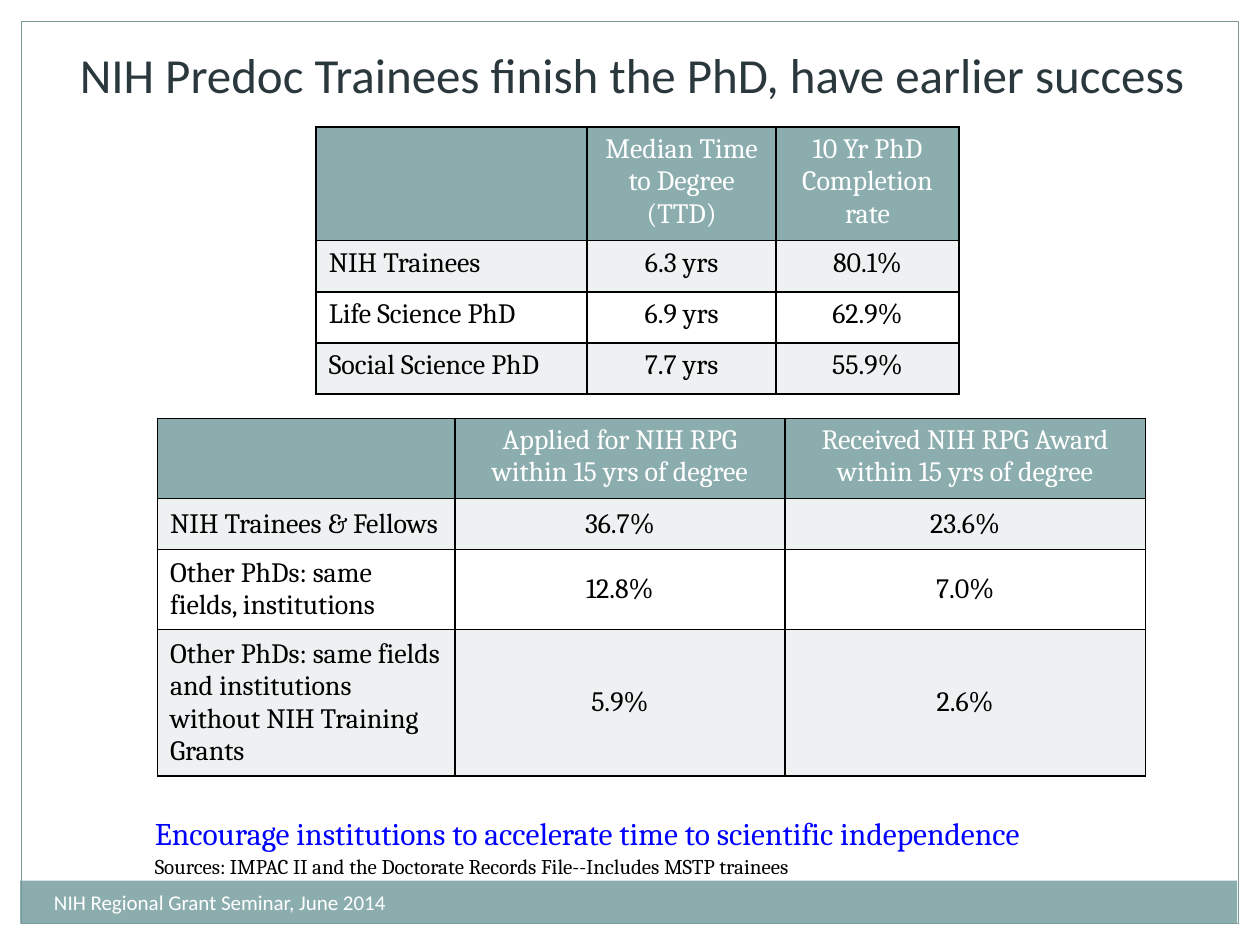
"""Build the slide on NIH predoctoral trainee outcomes with its two tables."""
from lxml.etree import SubElement
from pptx import Presentation
from pptx.dml.color import RGBColor
from pptx.enum.shapes import MSO_SHAPE as Shape
from pptx.enum.text import MSO_ANCHOR as Anchor, MSO_AUTO_SIZE as AutoSize, PP_ALIGN as Align
from pptx.oxml.ns import qn
from pptx.util import Inches, Pt

COLORS = {
    "white": "FFFFFF", "teal": "8CADAE", "frame": "7C999A", "band": "EEF1F2",
    "black": "000000", "title": "2A373D", "blue": "0000FF",
}

presentation = Presentation()
presentation.slide_width, presentation.slide_height = Inches(10), Inches(7.5)
column = presentation.slide_width / 100
row = presentation.slide_height / 75
slide = presentation.slides.add_slide(presentation.slide_layouts[5])


def grid(left, top, width, height):
    return [round(value) for value in (left * column, top * row, width * column, height * row)]


def style(paragraph, size, font, color, align=Align.LEFT):
    paragraph.alignment = align
    for run in paragraph.runs:
        run.font.size = Pt(size)
        run.font.name = font
        run.font.color.rgb = RGBColor.from_string(COLORS[color])


panels = [
    ((0, 0, 100, 1.7), "white", None),
    ((98.3, 0, 1.7, 75), "white", None),
    ((0, 0, 1.7, 75), "white", None),
    ((1.6, 69.9, 96.6, 3.4), "teal", None),
    ((1.7, 1.7, 96.6, 71.6), None, "frame"),
]
for box, fill, line in panels:
    shape = slide.shapes.add_shape(Shape.RECTANGLE, *grid(*box))
    shape.shadow.inherit = False
    if fill:
        shape.fill.solid()
        shape.fill.fore_color.rgb = RGBColor.from_string(COLORS[fill])
    else:
        shape.fill.background()
    if line:
        shape.line.color.rgb = RGBColor.from_string(COLORS[line])
        shape.line.width = Pt(0.75)
    else:
        shape.line.fill.background()

tables = [
    ((25.1, 10.1), (21.5, 15, 14.5), (9, 4.06, 4.06, 4.06), Anchor.TOP, [
        ("", "Median Time to Degree (TTD)", "10 Yr PhD Completion rate"),
        ("NIH Trainees", "6.3 yrs", "80.1%"),
        ("Life Science PhD", "6.9 yrs", "62.9%"),
        ("Social Science PhD", "7.7 yrs", "55.9%"),
    ]),
    ((12.5, 33.2), (23.6, 26.2, 28.6), (6.35, 4.06, 6.35, 11.65), Anchor.MIDDLE, [
        ("", "Applied for NIH RPG within 15 yrs of degree",
         "Received NIH RPG Award within 15 yrs of degree"),
        ("NIH Trainees & Fellows", "36.7%", "23.6%"),
        ("Other PhDs: same fields, institutions", "12.8%", "7.0%"),
        ("Other PhDs: same fields and institutions without NIH Training Grants", "5.9%", "2.6%"),
    ]),
]
row_fills = ["teal", "band", "white", "band"]
for origin, widths, heights, anchor, records in tables:
    box = grid(*origin, sum(widths), sum(heights))
    table = slide.shapes.add_table(len(records), len(widths), *box).table
    for table_column, width in zip(table.columns, widths):
        table_column.width = round(width * column)
    for table_row, height in zip(table.rows, heights):
        table_row.height = round(height * row)
    for row_index, record in enumerate(records):
        for column_index, text in enumerate(record):
            cell = table.cell(row_index, column_index)
            cell.text_frame.text = text
            cell.vertical_anchor = anchor if row_index else Anchor.TOP
            style(cell.text_frame.paragraphs[0], 16, "Cambria",
                  "black" if row_index else "white",
                  Align.CENTER if column_index else Align.LEFT)
            properties = cell._tc.get_or_add_tcPr()
            for side in ("a:lnL", "a:lnR", "a:lnT", "a:lnB"):
                border = SubElement(properties, qn(side), w=str(Pt(1)))
                border_fill = SubElement(border, qn("a:solidFill"))
                SubElement(border_fill, qn("a:srgbClr"), val=COLORS["black"])
            cell.fill.solid()
            cell.fill.fore_color.rgb = RGBColor.from_string(COLORS[row_fills[row_index]])

title = slide.shapes.title
title.left, title.top, title.width, title.height = grid(2, 3, 96.3, 7)
title.text_frame.text = "NIH Predoc Trainees finish the PhD, have earlier success"
title.text_frame.auto_size = AutoSize.NONE
title.text_frame.vertical_anchor = Anchor.TOP
style(title.text_frame.paragraphs[0], 28, "Calibri", "title", Align.CENTER)

notes = [
    ((11.3, 64.1, 76.5, 9.6), [
        ("Encourage institutions to accelerate time to scientific independence", 18, "Cambria", "blue"),
        ("Sources: IMPAC II and the Doctorate Records File--Includes MSTP trainees", 12, "Cambria", "black"),
    ]),
    ((3.3, 70.1, 39.2, 4), [("NIH Regional Grant Seminar, June 2014", 12, "Calibri", "white")]),
]
for box, lines in notes:
    text_frame = slide.shapes.add_textbox(*grid(*box)).text_frame
    text_frame.word_wrap = True
    text_frame.text = "\n".join(line[0] for line in lines)
    for paragraph, (_, size, font, color) in zip(text_frame.paragraphs, lines):
        style(paragraph, size, font, color)
    for paragraph in text_frame.paragraphs[1:]:
        paragraph.space_before = Pt(1)

presentation.save("out.pptx")
